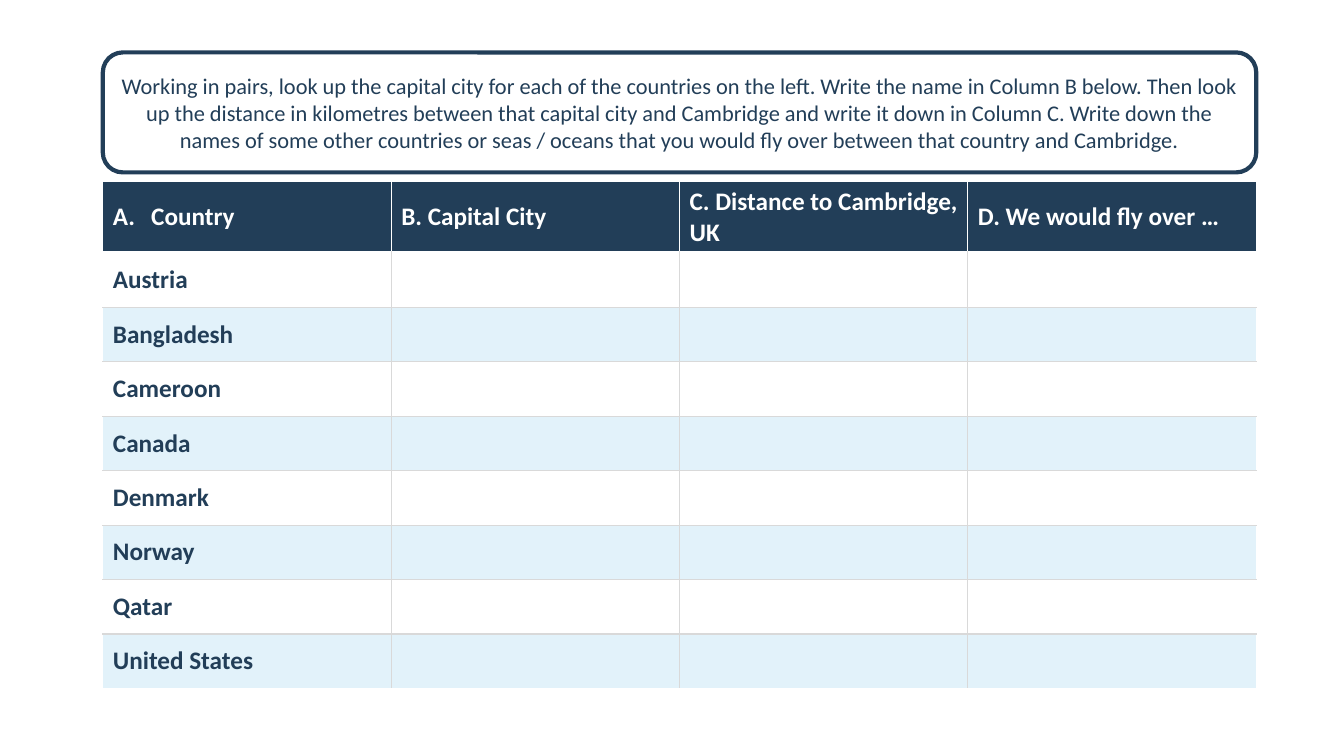
from lxml import etree
from pptx import Presentation
from pptx.dml.color import RGBColor
from pptx.enum import shapes, text
from pptx.oxml import ns
from pptx.util import Inches, Pt

COLORS = {"navy": "223E58", "white": "FFFFFF", "pale": "E2F2FA", "grey": "D9D9D9"}
INSTRUCTIONS = (
    "Working in pairs, look up the capital city for each of the countries on the left. "
    "Write the name in Column B below. Then look up the distance in kilometres between "
    "that capital city and Cambridge and write it down in Column C. Write down the names "
    "of some other countries or seas / oceans that you would fly over between that "
    "country and Cambridge."
)
HEADERS = ["Country", "B. Capital City", "C. Distance to Cambridge, UK", "D. We would fly over …"]
COUNTRIES = ["Austria", "Bangladesh", "Cameroon", "Canada",
             "Denmark", "Norway", "Qatar", "United States"]
LEFT, WIDTH, ROW_HEIGHT = 1.02, 11.44, 0.54


def set_font(font, size, color, bold=False):
    for name, value in {"name": "Calibri", "size": Pt(size), "bold": bold}.items():
        setattr(font, name, value)
    font.color.rgb = RGBColor.from_string(COLORS[color])


def add_border(cell, side, color, width):
    ln = etree.SubElement(cell._tc.get_or_add_tcPr(), ns.qn(f"a:ln{side}"), w=str(Pt(width)))
    fill = etree.SubElement(ln, ns.qn("a:solidFill"))
    etree.SubElement(fill, ns.qn("a:srgbClr"), val=COLORS[color])


prs = Presentation()
prs.slide_width, prs.slide_height = Inches(13.33), Inches(7.5)
s = prs.slides.add_slide(prs.slide_layouts[6])

box = s.shapes.add_shape(shapes.MSO_SHAPE.ROUNDED_RECTANGLE,
                         Inches(LEFT), Inches(0.52), Inches(WIDTH), Inches(1.19))
box.shadow.inherit = False
box.fill.solid()
box.fill.fore_color.rgb = RGBColor.from_string(COLORS["white"])
box.line.color.rgb = RGBColor.from_string(COLORS["navy"])
box.line.width = Pt(3)
tf = box.text_frame
tf.word_wrap = True
tf.vertical_anchor = text.MSO_ANCHOR.MIDDLE
p = tf.paragraphs[0]
p.alignment = text.PP_ALIGN.CENTER
r = p.add_run()
r.text = INSTRUCTIONS
set_font(r.font, 16, "navy")

rows = [HEADERS] + [[country, "", "", ""] for country in COUNTRIES]
last_row, last_col = len(rows) - 1, len(HEADERS) - 1
frame = s.shapes.add_table(len(rows), len(HEADERS), Inches(LEFT), Inches(1.8),
                           Inches(WIDTH), Inches(5.01))
table = frame.table
for column in table.columns:
    column.width = Inches(WIDTH / len(HEADERS))

for i, values in enumerate(rows):
    table.rows[i].height = Inches(ROW_HEIGHT)
    header = i == 0
    for j, value in enumerate(values):
        cell = table.cell(i, j)
        cell.vertical_anchor = text.MSO_ANCHOR.MIDDLE
        outer = {"L": j == 0, "R": j == last_col, "T": i <= 1, "B": i == last_row}
        for side, is_outer in outer.items():
            add_border(cell, side, "white" if header or is_outer else "grey",
                       3 if header and side == "B" else 1)
        cell.fill.solid()
        fill = "navy" if header else "white" if i % 2 else "pale"
        cell.fill.fore_color.rgb = RGBColor.from_string(COLORS[fill])
        p = cell.text_frame.paragraphs[0]
        if header and j == 0:
            pPr = p._p.get_or_add_pPr()
            pPr.set("marL", str(Inches(0.38)))
            pPr.set("indent", str(Inches(-0.38)))
            etree.SubElement(pPr, ns.qn("a:buAutoNum"), type="alphaUcPeriod")
        if value:
            r = p.add_run()
            r.text = value
            set_font(r.font, 18, "white" if header else "navy", bold=True)
frame.height = Inches(5.01)

prs.save("out.pptx")
